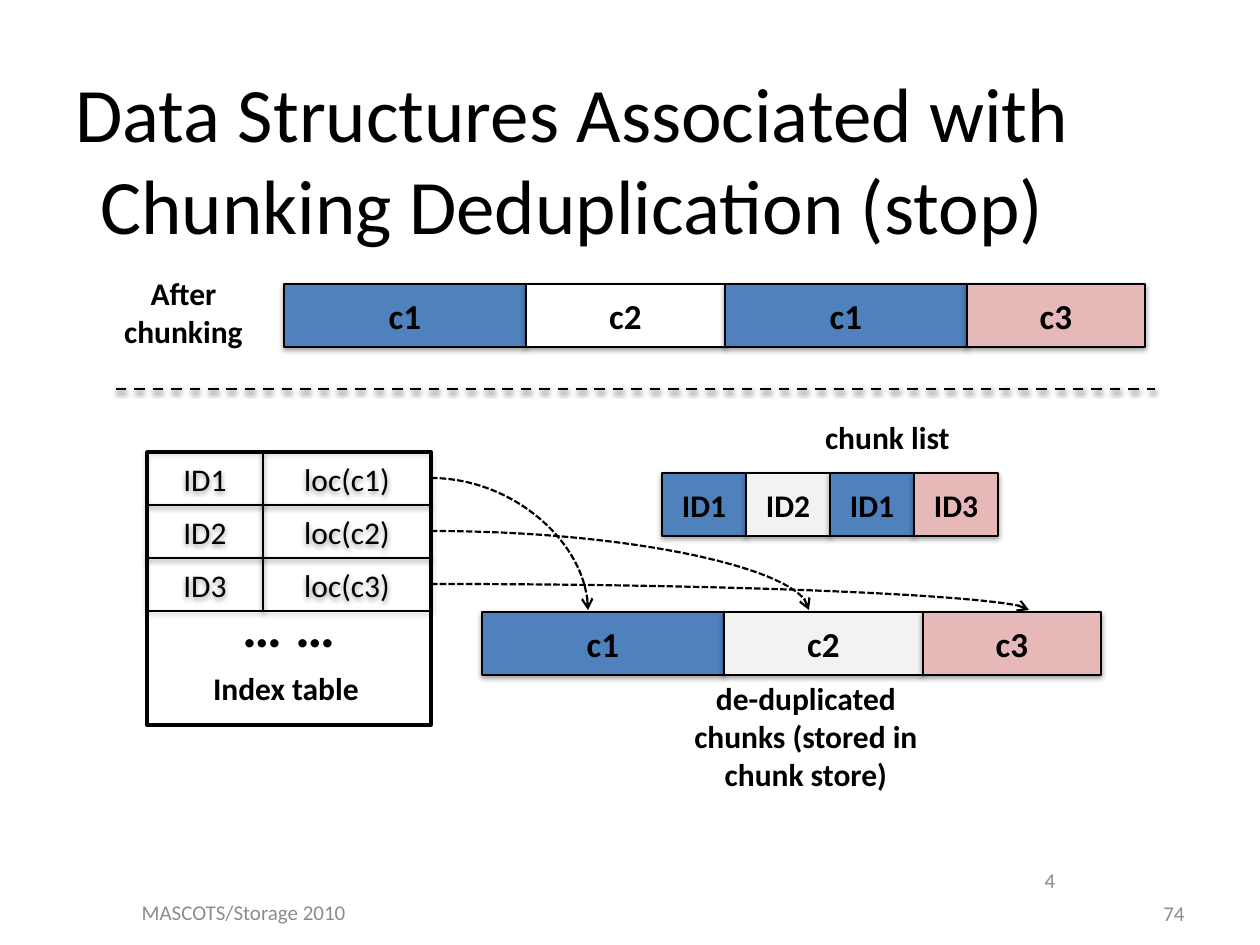
from lxml.etree import SubElement
from pptx import Presentation
from pptx.dml.color import RGBColor
from pptx.enum.dml import MSO_LINE
from pptx.enum.shapes import MSO_CONNECTOR, MSO_SHAPE
from pptx.enum.text import MSO_ANCHOR, PP_ALIGN
from pptx.oxml.ns import qn
from pptx.util import Emu, Pt

PX_PER_INCH = 126
COLORS = {
    "black": "000000",
    "white": "FFFFFF",
    "blue": "4F81BD",
    "light": "F2F2F2",
    "pink": "E6B9B8",
    "gray": "8C8C8C",
}
CHUNK_WIDTHS = {"c1": 242, "c2": 199, "c3": 178}


def px(length):
    return Emu(round(length * 914400 / PX_PER_INCH))


def color(name):
    return RGBColor.from_string(COLORS[name])


def format_text(shape, text, size, bold=False, font_color="black",
                align=PP_ALIGN.CENTER, anchor=MSO_ANCHOR.MIDDLE):
    frame = shape.text_frame
    frame.word_wrap = True
    frame.vertical_anchor = anchor
    frame.text = text
    paragraph = frame.paragraphs[0]
    paragraph.alignment = align
    font = paragraph.font
    font.name = "Calibri"
    font.size = Pt(size)
    font.bold = bold
    font.color.rgb = color(font_color)


def add_shadow(effects):
    """Fill an empty effect list with a soft shadow that falls downwards."""
    shadow = SubElement(effects, qn("a:outerShdw"), blurRad="40000",
                        dist="20000", dir="5400000", rotWithShape="0")
    rgb = SubElement(shadow, qn("a:srgbClr"), val=COLORS["black"])
    SubElement(rgb, qn("a:alpha"), val="38000")


def add_label(slide, text, left, top, width, height, size=18, **style):
    box = slide.shapes.add_textbox(px(left), px(top), px(width), px(height))
    format_text(box, text, size, **style)


def add_box(slide, left, top, width, height, fill=None, line_width=0.75):
    shape = slide.shapes.add_shape(MSO_SHAPE.RECTANGLE, px(left), px(top),
                                   px(width), px(height))
    if fill:
        shape.fill.solid()
        shape.fill.fore_color.rgb = color(fill)
    else:
        shape.fill.background()
    shape.line.color.rgb = color("black")
    shape.line.width = Pt(line_width)
    shape.shadow.inherit = False
    return shape


def add_row(slide, left, top, height, cells, size, bold=True):
    """Set cells of (text, width, fill) side by side."""
    for text, width, fill in cells:
        cell = add_box(slide, left, top, width, height, fill)
        add_shadow(cell._element.spPr.find(qn("a:effectLst")))
        format_text(cell, text, size, bold)
        left += width


def add_line(slide, kind, start, end, width, dash):
    """Return the connector and its empty effect list."""
    connector = slide.shapes.add_connector(
        kind, px(start[0]), px(start[1]), px(end[0]), px(end[1]))
    connector.line.color.rgb = color("black")
    connector.line.width = Pt(width)
    connector.line.dash_style = dash
    effects = SubElement(connector._element.spPr, qn("a:effectLst"))
    return connector, effects


def add_divider(slide):
    _, effects = add_line(slide, MSO_CONNECTOR.STRAIGHT, (116, 389),
                          (1155, 389), 1.5, MSO_LINE.DASH)
    add_shadow(effects)


def add_pointer(slide, start, end):
    """Draw a quarter-curve arrow that leaves sideways and lands downwards."""
    connector, _ = add_line(slide, MSO_CONNECTOR.CURVE, start, end, 1.25,
                            MSO_LINE.SQUARE_DOT)
    properties = connector._element.spPr
    properties.find(qn("a:prstGeom")).set("prst", "curvedConnector2")
    SubElement(properties.find(qn("a:ln")), qn("a:tailEnd"), type="arrow")


def add_chunks(slide, left, top, chunks):
    cells = [(name, CHUNK_WIDTHS[name], fill) for name, fill in chunks]
    add_row(slide, left, top, 63, cells, 20)


def add_index_table(slide):
    left, top, row_height = 147, 452, 53
    id_width, location_width = 116, 168
    width = id_width + location_width
    add_box(slide, left, top, width, 273, "white", line_width=2)
    pointer_ends = [(588, 610), (809, 610), (1029, 610)]
    for index, end in enumerate(pointer_ends):
        row_top = top + index * row_height
        cells = [(f"ID{index + 1}", id_width, None),
                 (f"loc(c{index + 1})", location_width, None)]
        add_row(slide, left, row_top, row_height, cells, 18, bold=False)
        add_pointer(slide, (left + width, row_top + row_height // 2), end)
    add_label(slide, "… …", left, 599, width, 53, 32, bold=True)


def add_captions(slide):
    captions = [
        ("After chunking", 105, 268, 157, 89),
        ("chunk list", 725, 412, 325, 51),
        ("Index table", 155, 663, 262, 51),
        ("de-duplicated chunks (stored in chunk store)", 675, 673, 262, 127),
    ]
    for text, *place in captions:
        add_label(slide, text, *place, bold=True, anchor=MSO_ANCHOR.TOP)


def add_footer(slide):
    add_label(slide, "74", 903, 882, 294, 63, 12, font_color="gray",
              align=PP_ALIGN.RIGHT)
    add_label(slide, "4", 903, 849, 294, 63, 12, font_color="gray")
    add_label(slide, "MASCOTS/Storage 2010", 0, 880, 358, 65, 12,
              font_color="gray", align=PP_ALIGN.RIGHT)


def add_title(slide):
    title = slide.shapes.title
    title.left, title.top = px(32), px(63)
    title.width, title.height = px(1081), px(189)
    format_text(title, "Data Structures Associated with Chunking "
                       "Deduplication (stop)", 44)


def main():
    presentation = Presentation()
    presentation.slide_width = px(1260)
    presentation.slide_height = px(945)
    slide = presentation.slides.add_slide(presentation.slide_layouts[5])

    add_title(slide)
    add_chunks(slide, 284, 284, [("c1", "blue"), ("c2", "white"),
                                 ("c1", "blue"), ("c3", "pink")])
    add_divider(slide)
    id_fills = [("ID1", "blue"), ("ID2", "light"),
                ("ID1", "blue"), ("ID3", "pink")]
    add_row(slide, 662, 473, 63, [(name, 84, fill) for name, fill in id_fills], 18)
    add_index_table(slide)
    add_chunks(slide, 482, 612, [("c1", "blue"), ("c2", "light"),
                                 ("c3", "pink")])
    add_captions(slide)
    add_footer(slide)
    presentation.save("out.pptx")


if __name__ == "__main__":
    main()
